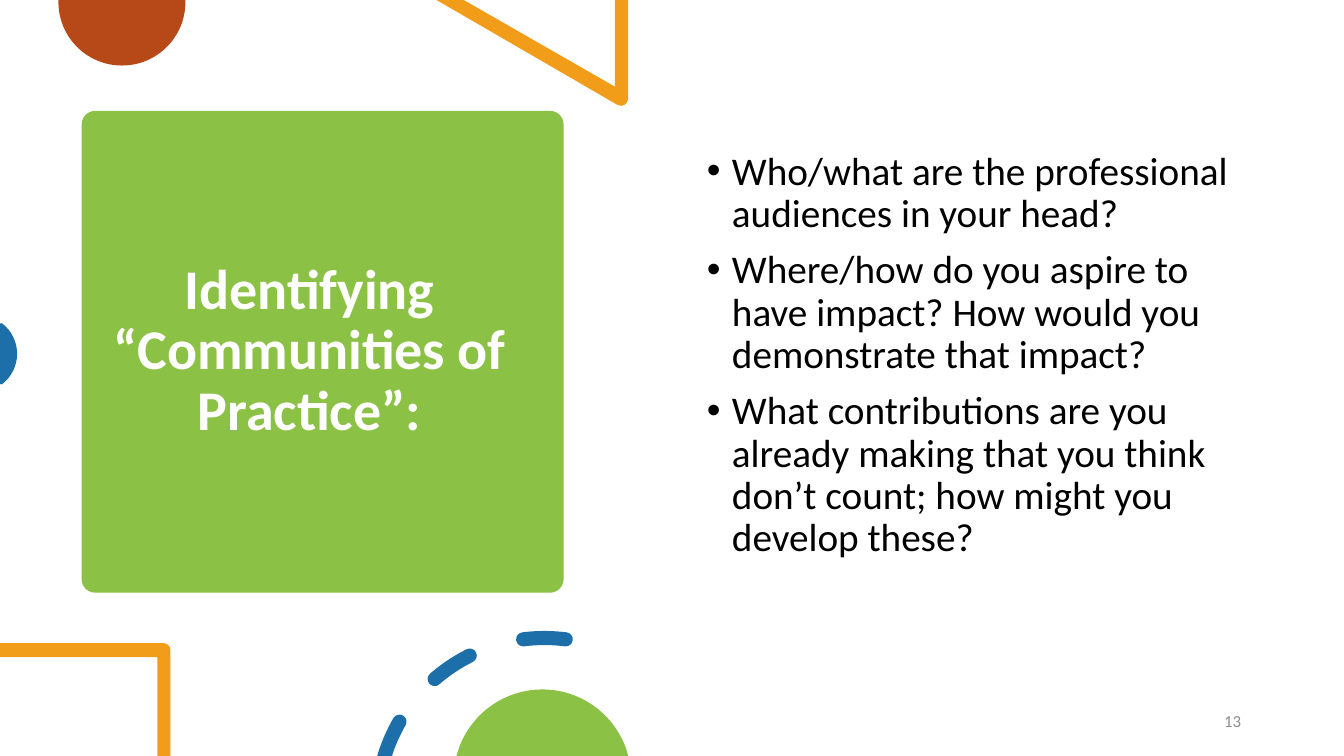
from math import ceil, cos, radians, sin, tan

from lxml import etree
from pptx import Presentation
from pptx.dml.color import RGBColor
from pptx.enum.shapes import MSO_SHAPE
from pptx.enum.text import MSO_ANCHOR, MSO_AUTO_SIZE, PP_ALIGN
from pptx.oxml.ns import qn
from pptx.util import Inches, Pt

RECTANGLE, ROUNDED = MSO_SHAPE.RECTANGLE, MSO_SHAPE.ROUNDED_RECTANGLE
MIDDLE, TOP = MSO_ANCHOR.MIDDLE, MSO_ANCHOR.TOP
CENTER, LEFT, RIGHT = PP_ALIGN.CENTER, PP_ALIGN.LEFT, PP_ALIGN.RIGHT
NO_FIT = MSO_AUTO_SIZE.NONE
FONT = "Calibri"
WIDTH, HEIGHT = 13.33, 7.5
COLORS = {
    "green": "8BC145",
    "rust": "B74919",
    "orange": "F19D19",
    "blue": "1D6FA9",
    "white": "FFFFFF",
    "black": "000000",
    "gray": "8C8C8C",
}
TITLE = "Identifying “Communities of Practice”:"
QUESTIONS = [
    "Who/what are the professional audiences in your head?",
    "Where/how do you aspire to have impact? How would you demonstrate that impact?",
    "What contributions are you already making that you think "
    "don’t count; how might you develop these?",
]


def color(name):
    return RGBColor.from_string(COLORS[name])


def place(shape, box):
    shape.left, shape.top, shape.width, shape.height = map(Inches, box)


def paint(shape, fill):
    shape.shadow.inherit = False
    shape.fill.solid()
    shape.fill.fore_color.rgb = color(fill)
    shape.line.fill.background()


def write(paragraph, text, size, fill, align, bold=False):
    paragraph.alignment = align
    run = paragraph.add_run()
    run.text = text
    run.font.name = FONT
    run.font.size = Pt(size)
    run.font.bold = bold
    run.font.color.rgb = color(fill)


def prepare_frame(shape, anchor):
    frame = shape.text_frame
    frame.word_wrap = True
    frame.auto_size = NO_FIT
    frame.vertical_anchor = anchor
    return frame


def polar(center, radius, degrees):
    angle = radians(degrees)
    return center[0] + radius * sin(angle), center[1] - radius * cos(angle)


def lines(*points):
    return [(point,) for point in points]


def arc(center, radius, start, end, pieces=None):
    pieces = pieces or ceil(abs(end - start) / 90)
    sweep = (end - start) / pieces
    handle = 4 / 3 * tan(radians(sweep) / 4) * radius
    segments = lines(polar(center, radius, start))
    for index in range(pieces):
        first = start + index * sweep
        last = first + sweep
        segments.append((polar(polar(center, radius, first), handle, first + 90),
                         polar(polar(center, radius, last), handle, last - 90),
                         polar(center, radius, last)))
    return segments


def dash(center, radius, start, end, half, lean):
    segments = arc(center, radius + half, start - lean, end, 2)
    segments += arc(polar(center, radius, end), half, end, end + 180)[1:]
    segments += arc(center, radius - half, end, start + lean, 1)[1:]
    if not lean:
        segments += arc(polar(center, radius, start), half, start + 180, start + 360)[1:]
    return segments


def add_outline(slide, contours, fill):
    builder = None
    for contour in contours:
        ends = [tuple(map(Inches, segment[-1])) for segment in contour]
        if builder is None:
            builder = slide.shapes.build_freeform(*ends[0])
        else:
            builder.move_to(*ends[0])
        builder.add_line_segments(ends[1:], close=True)
    shape = builder.convert_to_shape()
    segments = [segment for contour in contours for segment in contour[1:]]
    for element, segment in zip(list(shape._element.iter(qn("a:lnTo"))), segments):
        if len(segment) == 3:
            element.tag = qn("a:cubicBezTo")
            for position, (x, y) in enumerate(segment[:2]):
                handle = etree.Element(qn("a:pt"))
                handle.set("x", str(Inches(x) - shape.left))
                handle.set("y", str(Inches(y) - shape.top))
                element.insert(position, handle)
    paint(shape, fill)


def add_top_decor(slide, box):
    left, top, width, height = box
    right = left + width
    circle = lines((left + 0.58, top), (left + 1.84, top))
    circle += arc((left + 1.21, top + 0.02), 0.63, 90, 270)
    add_outline(slide, [circle], "rust")
    triangle = lines((right, top), (right - 0.13, top), (right - 0.13, top + 0.86),
                     (right - 1.63, top), (right - 1.9, top))
    triangle += arc((right - 0.07, top + height - 0.07), 0.07, 210, 90)
    add_outline(slide, [triangle], "orange")


def add_edge_decor(slide, box):
    left, top, width, height = box
    center = (left + width - 0.38, top + height / 2)
    segments = lines((left, top + height), (left, top)) + arc(center, 0.38, 37, 143)
    add_outline(slide, [segments], "blue")


def add_bottom_decor(slide, box):
    left, top, width, height = box
    bottom = top + height
    right, edge = left + 1.69, top + 0.13
    frame = lines((left, edge), (left, edge + 0.14), (right - 0.13, edge + 0.14),
                  (right - 0.13, bottom), (right, bottom))
    frame += arc((right - 0.07, edge + 0.07), 0.07, 90, 0)
    add_outline(slide, [frame], "orange")
    center = (left + 5.4, bottom + 0.49)
    dashes = [(287.25, 300, 0.75), (319, 333.5, 0), (352.7, 367.3, 0)]
    add_outline(slide, [dash(center, 1.66, start, end, 0.07, lean)
                        for start, end, lean in dashes], "blue")
    add_outline(slide, [arc((left + 5.38, bottom + 0.22), 0.88, -75.5, 75.5)], "green")


def add_title_card(slide, box):
    left, top, width, height = box
    panel = slide.shapes.add_shape(RECTANGLE, 0, 0, Inches(WIDTH), Inches(HEIGHT))
    paint(panel, "white")
    card = slide.shapes.add_shape(ROUNDED, *map(Inches, box))
    card.adjustments[0] = 0.028
    paint(card, "green")
    title = slide.shapes.title
    for shape in (panel, card):
        title._element.addprevious(shape._element)
    place(title, (left - 0.42, top + 0.11, width + 0.58, height - 0.22))
    paragraph = prepare_frame(title, MIDDLE).paragraphs[0]
    paragraph.line_spacing = 0.9
    write(paragraph, TITLE, 40, "white", CENTER, True)


def add_questions(slide, box):
    body = slide.placeholders[1]
    place(body, box)
    frame = prepare_frame(body, TOP)
    for index, question in enumerate(QUESTIONS):
        paragraph = frame.add_paragraph() if index else frame.paragraphs[0]
        paragraph.line_spacing = 0.9
        paragraph.space_before = Pt(10)
        write(paragraph, question, 28, "black", LEFT)
        properties = paragraph._p.get_or_add_pPr()
        properties.set("marL", str(Inches(0.5)))
        properties.set("indent", str(Inches(-0.25)))
        etree.SubElement(properties, qn("a:buFont")).set("typeface", "Arial")
        etree.SubElement(properties, qn("a:buChar")).set("char", "•")


def add_page_number(slide, box):
    frame = prepare_frame(slide.shapes.add_textbox(*map(Inches, box)), MIDDLE)
    paragraph = frame.paragraphs[0]
    paragraph.space_after = Pt(6)
    write(paragraph, "13", 12, "gray", RIGHT)


def main():
    presentation = Presentation()
    presentation.slide_width = Inches(WIDTH)
    presentation.slide_height = Inches(HEIGHT)
    slide = presentation.slides.add_slide(presentation.slide_layouts[1])
    add_title_card(slide, (0.81, 1.1, 4.78, 4.78))
    add_top_decor(slide, (0, 0, 6.23, 1.05))
    add_edge_decor(slide, (0, 3.21, 0.17, 0.6))
    add_questions(slide, (6.66, 1.45, 5.75, 5.35))
    add_bottom_decor(slide, (0, 6.25, 6.23, 1.25))
    add_page_number(slide, (11.48, 6.95, 0.93, 0.4))
    presentation.save("out.pptx")


if __name__ == "__main__":
    main()
